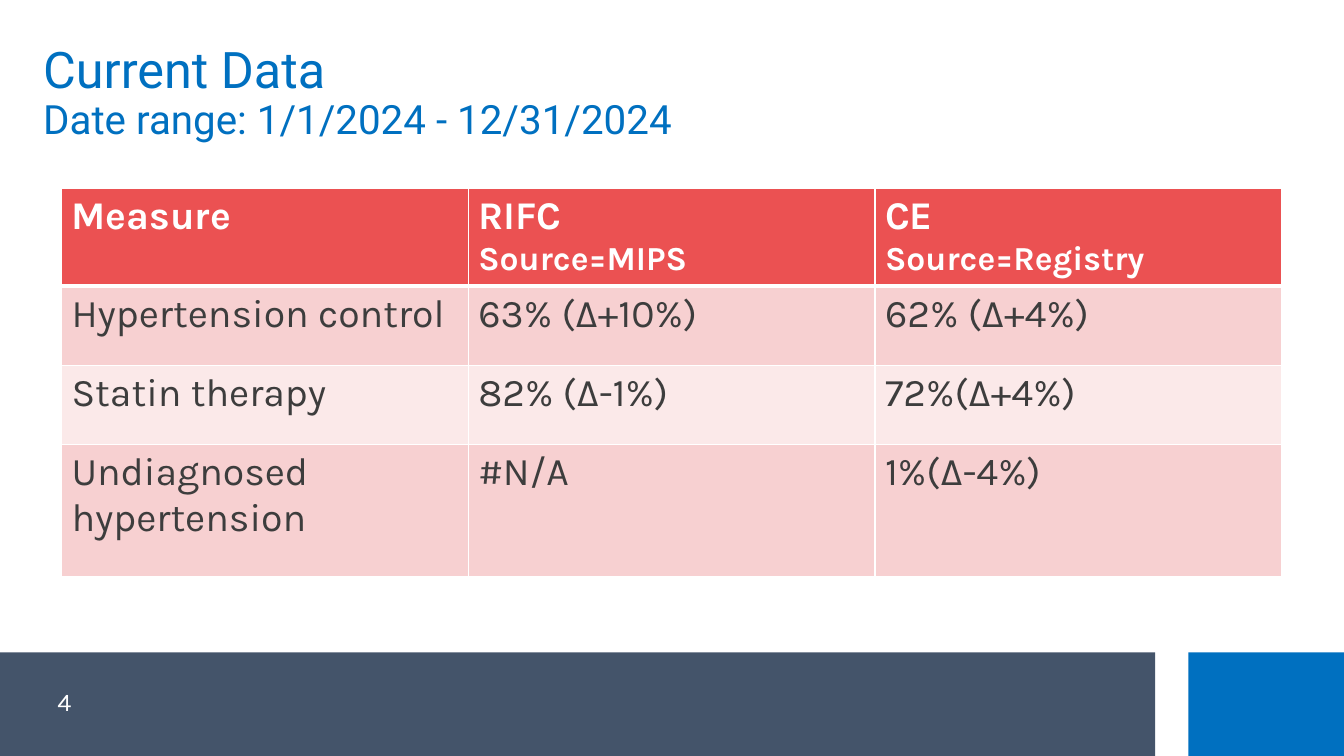
import pptx
import pptx.dml.color
import pptx.enum.shapes
import pptx.enum.text
import pptx.oxml
import pptx.oxml.ns
import pptx.util

Cm = pptx.util.Cm
Pt = pptx.util.Pt
RGBColor = pptx.dml.color.RGBColor
Align = pptx.enum.text.PP_ALIGN
Anchor = pptx.enum.text.MSO_ANCHOR

WHITE = RGBColor(0xFF, 0xFF, 0xFF)
SLATE = RGBColor(0x44, 0x54, 0x6A)
BLUE = RGBColor(0x00, 0x70, 0xC0)
RED = RGBColor(0xEB, 0x51, 0x52)
ROSE = RGBColor(0xF7, 0xD0, 0xD1)
PALE_ROSE = RGBColor(0xFB, 0xE9, 0xE9)
CHARCOAL = RGBColor(0x3D, 0x3D, 0x3D)

HEADING_FONT = "Roboto"
BODY_FONT = "Karla"

MEASURES = [
    ["Measure", "RIFC\nSource=MIPS", "CE\nSource=Registry"],
    ["Hypertension control", "63% (Δ+10%)", "62% (Δ+4%)"],
    ["Statin therapy", "82% (Δ-1%)", "72%(Δ+4%)"],
    ["Undiagnosed hypertension", "#N/A", "1%(Δ-4%)"],
]
ROW_HEIGHTS = [2, 2, 2, 3.33]
COLUMN_WIDTH = 10.25


class SlideBuilder:
    def __init__(self, page):
        self.page = page

    def span(self, para, text, color, **formats):
        span = para.add_run()
        span.text = text
        span.font.color.rgb = color
        for name, value in formats.items():
            setattr(span.font, name, value)

    def bar(self, left, top, width, height, color):
        bar = self.page.shapes.add_shape(
            pptx.enum.shapes.MSO_SHAPE.RECTANGLE,
            Cm(left), Cm(top), Cm(width), Cm(height))
        bar.shadow.inherit = False
        bar.fill.solid()
        bar.fill.fore_color.rgb = color
        bar.line.fill.background()

    def text(self, left, top, width, height, lines, color, font, **formats):
        box = self.page.shapes.add_textbox(
            Cm(left), Cm(top), Cm(width), Cm(height))
        box.text_frame.word_wrap = True
        box.text_frame.vertical_anchor = Anchor.MIDDLE
        para = box.text_frame.paragraphs[0]
        for name, value in formats.items():
            setattr(para, name, value)
        for index, (line, size) in enumerate(lines):
            if index:
                para.add_line_break()
            self.span(para, line, color, name=font, size=Pt(size))

    def borders(self, cell, **widths):
        properties = cell._tc.get_or_add_tcPr()
        for side, width in widths.items():
            properties.append(pptx.oxml.parse_xml(
                f'<a:ln{side} {pptx.oxml.ns.nsdecls("a")} w="{Pt(width)}">'
                f'<a:solidFill><a:srgbClr val="{WHITE}"/></a:solidFill>'
                f'</a:ln{side}>'))

    def cell(self, cell, text, row):
        header = row == 0
        self.borders(cell, L=1, R=1, T=3 if row == 1 else 1,
                     B=3 if header else 1)
        cell.fill.solid()
        cell.fill.fore_color.rgb = (
            RED if header else ROSE if row % 2 else PALE_ROSE)
        for index, line in enumerate(text.split("\n")):
            frame = cell.text_frame
            para = frame.add_paragraph() if index else frame.paragraphs[0]
            self.span(para, line, WHITE if header else CHARCOAL,
                      name=BODY_FONT, size=Pt(24 if index else 28),
                      bold=header)

    def table(self, left, top, rows, column_width, row_heights):
        columns = len(rows[0])
        table = self.page.shapes.add_table(
            len(rows), columns, Cm(left), Cm(top),
            Cm(column_width * columns), Cm(sum(row_heights))).table
        for column in table.columns:
            column.width = Cm(column_width)
        for row, texts in enumerate(rows):
            table.rows[row].height = Cm(row_heights[row])
            for column, text in enumerate(texts):
                self.cell(table.cell(row, column), text, row)


def main():
    deck = pptx.Presentation()
    deck.slide_width = Cm(33.87)
    deck.slide_height = Cm(19.05)
    builder = SlideBuilder(deck.slides.add_slide(deck.slide_layouts[6]))

    # Footer bars and page number
    builder.bar(0, 16.44, 29.11, 2.61, SLATE)
    builder.bar(29.95, 16.44, 3.92, 2.61, BLUE)
    builder.text(0.84, 17.2, 1.57, 0.94, [("4", 18)], WHITE, BODY_FONT,
                 alignment=Align.CENTER)

    # Title
    builder.text(0.84, 0.91, 32.18, 2.92,
                 [("Current Data", 36),
                  ("Date range: 1/1/2024 - 12/31/2024", 28.8)],
                 BLUE, HEADING_FONT, line_spacing=0.9)

    # Measures by source
    builder.table(1.55, 4.75, MEASURES, COLUMN_WIDTH, ROW_HEIGHTS)

    deck.save("out.pptx")


if __name__ == "__main__":
    main()
